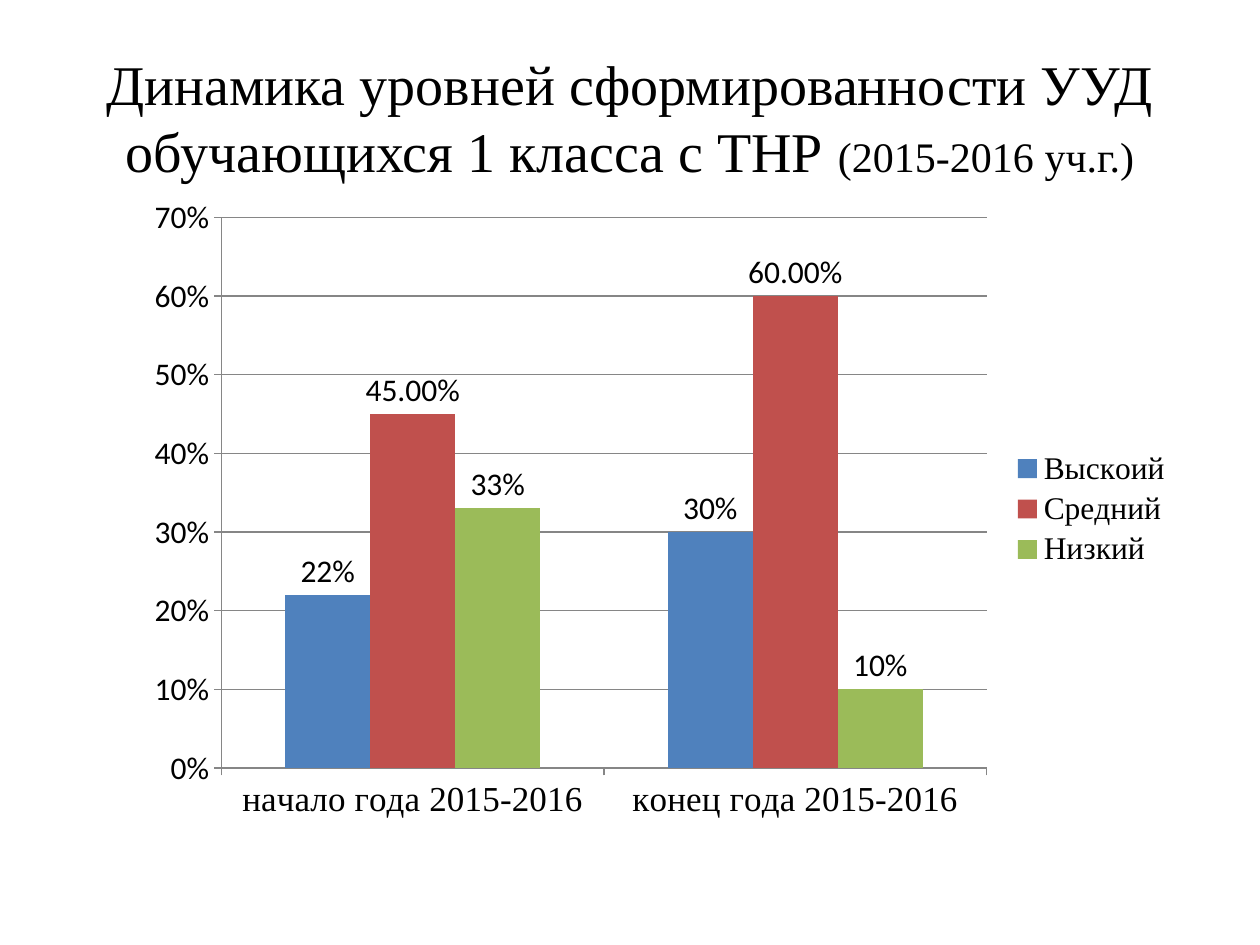
from pptx import Presentation
from pptx.chart.data import CategoryChartData
from pptx.dml.color import RGBColor
from pptx.enum.chart import XL_CHART_TYPE as ChartType, XL_LABEL_POSITION as LabelPosition
from pptx.enum.chart import XL_LEGEND_POSITION as LegendPosition, XL_TICK_MARK as TickMark
from pptx.enum.text import MSO_ANCHOR, MSO_AUTO_SIZE, PP_ALIGN
from pptx.util import Inches, Pt

COLORS = {"text": "000000", "grid": "868686", "high": "4F81BD", "middle": "C0504D", "low": "9BBB59"}
SERIF = "Times New Roman"


def style_font(font, size, name):
    font.size = Pt(size)
    font.name = name
    font.color.rgb = RGBColor.from_string(COLORS["text"])


deck = Presentation()
deck.slide_width, deck.slide_height = Inches(10), Inches(7.5)
page = deck.slides.add_slide(deck.slide_layouts[5])

title = page.shapes.title
title.left, title.top, title.width, title.height = Inches(0.5), Inches(0.3), Inches(9), Inches(1.25)
title_text = title.text_frame
title_text.word_wrap = True
title_text.auto_size = MSO_AUTO_SIZE.NONE
title_text.vertical_anchor = MSO_ANCHOR.MIDDLE
para = title_text.paragraphs[0]
para.alignment = PP_ALIGN.CENTER
for words, size in [
    ("Динамика уровней сформированности УУД обучающихся 1 класса с ТНР ", 32),
    ("(2015-2016 уч.г.)", 24),
]:
    span = para.add_run()
    span.text = words
    style_font(span.font, size, SERIF)

levels = [
    ("Выскоий", (0.22, 0.3), "high", "0%"),
    ("Средний", (0.45, 0.6), "middle", "0.00%"),
    ("Низкий", (0.33, 0.1), "low", "0%"),
]
data = CategoryChartData()
data.categories = ["начало года 2015-2016", "конец года 2015-2016"]
for name, values, color, label_format in levels:
    data.add_series(name, values, label_format)

chart = page.shapes.add_chart(
    ChartType.COLUMN_CLUSTERED, Inches(1.06), Inches(1.47), Inches(8.35), Inches(5.14), data
).chart
chart.has_title = False
style_font(chart.font, 18, "Calibri")

chart.has_legend = True
chart.legend.position = LegendPosition.RIGHT
chart.legend.include_in_layout = False
style_font(chart.legend.font, 18, SERIF)

plot = chart.plots[0]
plot.gap_width = 150
plot.overlap = 0
plot.vary_by_categories = False
for series, (name, values, color, label_format) in zip(plot.series, levels):
    series.format.fill.solid()
    series.format.fill.fore_color.rgb = RGBColor.from_string(COLORS[color])
    labels = series.data_labels
    labels.show_value = True
    labels.position = LabelPosition.OUTSIDE_END
    labels.number_format = label_format
    labels.number_format_is_linked = False
    style_font(labels.font, 18, "Calibri")

values_axis, categories_axis = chart.value_axis, chart.category_axis
values_axis.minimum_scale = 0
values_axis.maximum_scale = 0.7
values_axis.major_unit = 0.1
values_axis.has_major_gridlines = True
values_axis.tick_labels.number_format = "0%"
values_axis.tick_labels.number_format_is_linked = False
style_font(values_axis.tick_labels.font, 18, "Calibri")
style_font(categories_axis.tick_labels.font, 20, SERIF)
for axis in (values_axis, categories_axis):
    axis.major_tick_mark = TickMark.OUTSIDE
    axis.minor_tick_mark = TickMark.NONE
for line in (values_axis.format.line, categories_axis.format.line, values_axis.major_gridlines.format.line):
    line.color.rgb = RGBColor.from_string(COLORS["grid"])
    line.width = Pt(0.75)

deck.save("out.pptx")
